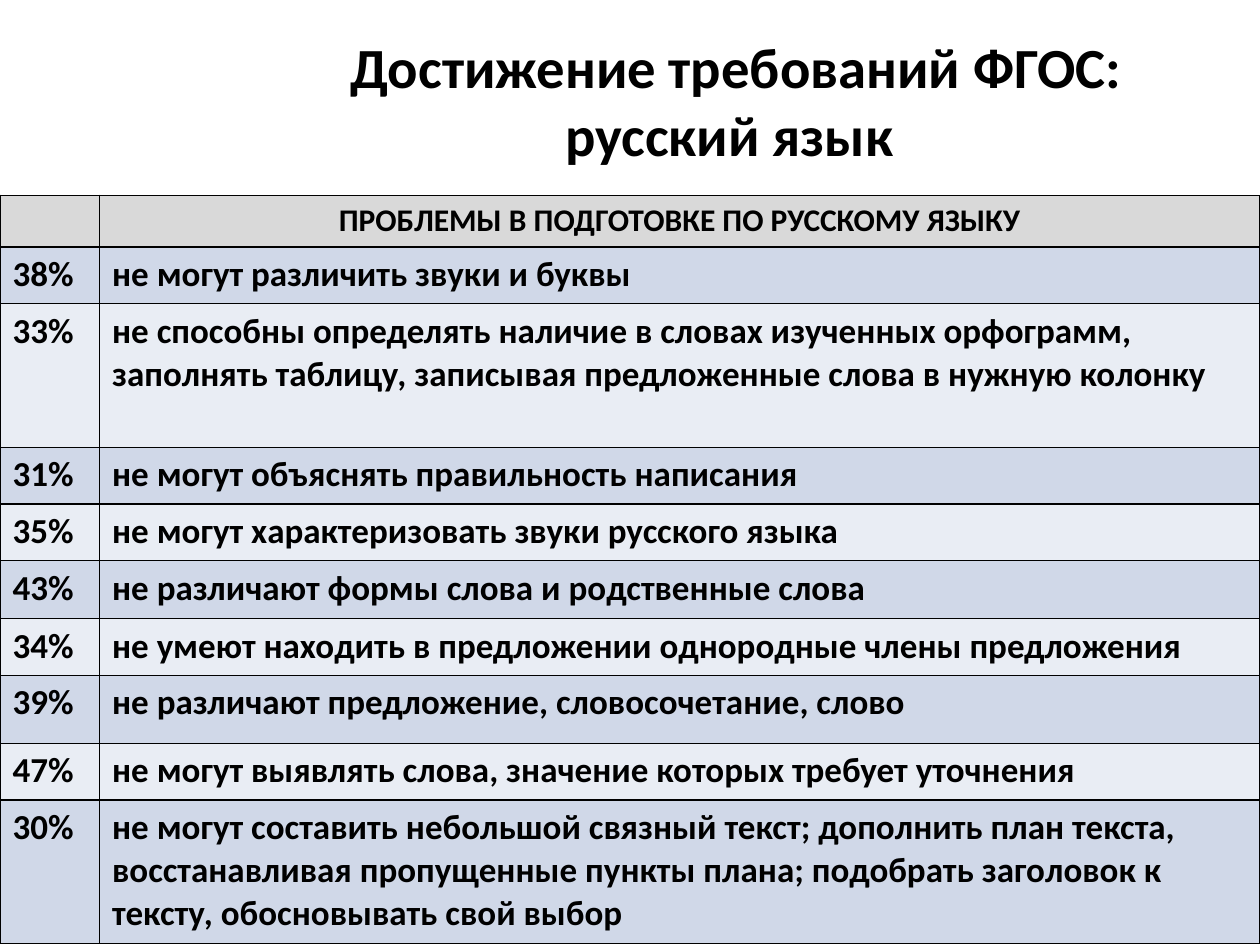
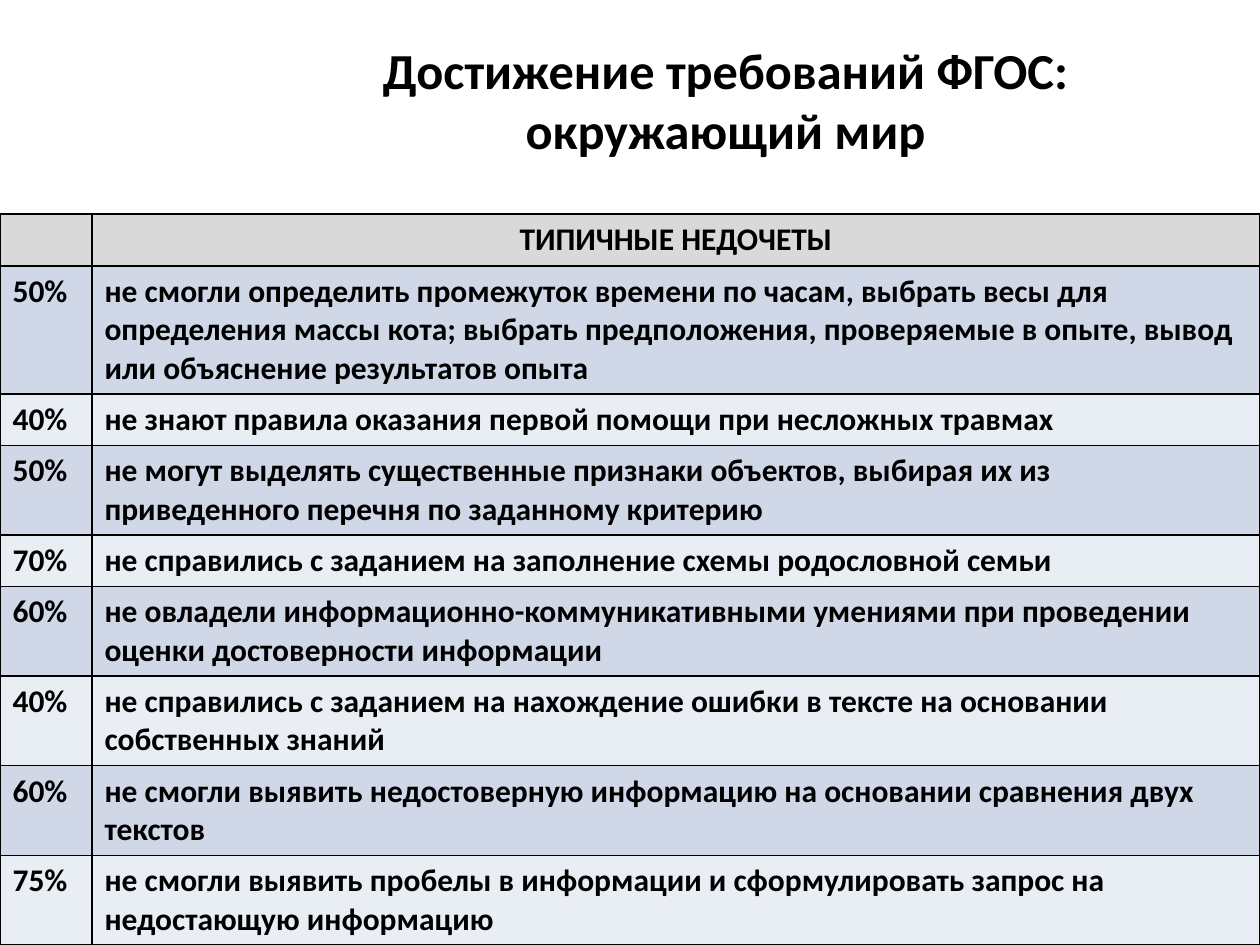
from dataclasses import dataclass

from lxml.etree import SubElement
from pptx import Presentation
from pptx.dml.color import RGBColor
from pptx.enum.text import MSO_ANCHOR, MSO_AUTO_SIZE, PP_ALIGN
from pptx.oxml.ns import qn
from pptx.util import Emu, Pt

EMU_PER_PX = 9144
SLIDE_WIDTH, SLIDE_HEIGHT = 1000, 750
TITLE_TOP, TITLE_HEIGHT, TITLE_RIGHT = 25, 108, 959
TITLE_ONLY_LAYOUT = 5
COLORS = {
    "text": "000000",
    "border": "000000",
    "header": "D9D9D9",
    "odd_row": "D0D8E8",
    "even_row": "E9EDF4",
}
FONT_FORMAT = {"name": "Calibri", "bold": True}
TITLE_FORMAT = {
    "word_wrap": True,
    "auto_size": MSO_AUTO_SIZE.NONE,
    "vertical_anchor": MSO_ANCHOR.MIDDLE,
}
BORDER_WIDTH = Pt(1)
BORDER_SIDES = ("a:lnL", "a:lnR", "a:lnT", "a:lnB")
HEADER_SIZE = 18


@dataclass(frozen=True)
class Finding:
    share: str
    problem: str
    height: int


@dataclass(frozen=True)
class SubjectSlide:
    title: str
    title_left: int
    title_size: float
    table_top: int
    share_width: int
    header: str
    text_size: int
    findings: tuple[Finding, ...]


HEADER_HEIGHT = 41

SUBJECTS = (
    SubjectSlide(
        title="Достижение требований ФГОС: русский язык ",
        title_left=209,
        title_size=32.4,
        table_top=155,
        share_width=79,
        header="ПРОБЛЕМЫ В ПОДГОТОВКЕ ПО РУССКОМУ ЯЗЫКУ",
        text_size=20,
        findings=(
            Finding("38%", "не могут различить звуки и буквы", 45),
            Finding("33%", "не способны определять наличие в словах изученных орфограмм, "
                    "заполнять таблицу, записывая предложенные слова в нужную колонку", 114),
            Finding("31%", "не могут объяснять правильность написания", 45),
            Finding("35%", "не могут характеризовать звуки русского языка", 45),
            Finding("43%", "не различают формы слова и родственные слова", 46),
            Finding("34%", "не умеют находить в предложении однородные члены предложения", 45),
            Finding("39%", "не различают предложение, словосочетание, слово", 54),
            Finding("47%", "не могут выявлять слова, значение которых требует уточнения", 45),
            Finding("30%", "не могут составить небольшой связный текст; дополнить план текста, "
                    "восстанавливая пропущенные пункты плана; подобрать заголовок к тексту, "
                    "обосновывать свой выбор", 114),
        ),
    ),
    SubjectSlide(
        title="Достижение требований ФГОС: окружающий мир",
        title_left=193,
        title_size=28.8,
        table_top=170,
        share_width=73,
        header="ТИПИЧНЫЕ НЕДОЧЕТЫ",
        text_size=18,
        findings=(
            Finding("50%", "не смогли определить промежуток времени по часам, выбрать весы для "
                    "определения массы кота; выбрать предположения, проверяемые в опыте, вывод "
                    "или объяснение результатов опыта", 101),
            Finding("40%", "не знают правила оказания первой помощи при несложных травмах", 41),
            Finding("50%", "не могут выделять существенные признаки объектов, выбирая их из "
                    "приведенного перечня по заданному критерию", 71),
            Finding("70%", "не справились с заданием на заполнение схемы родословной семьи", 41),
            Finding("60%", "не овладели информационно-коммуникативными умениями при проведении "
                    "оценки достоверности информации", 71),
            Finding("40%", "не справились с заданием на нахождение ошибки в тексте на основании "
                    "собственных знаний", 71),
            Finding("60%", "не смогли выявить недостоверную информацию на основании сравнения "
                    "двух текстов", 68),
            Finding("75%", "не смогли выявить пробелы в информации и сформулировать запрос на "
                    "недостающую информацию", 71),
        ),
    ),
)


def px(length: int) -> Emu:
    return Emu(length * EMU_PER_PX)


def set_attributes(target, values: dict) -> None:
    for name, value in values.items():
        setattr(target, name, value)


def write_text(text_frame, text: str, size: float, alignment: PP_ALIGN) -> None:
    paragraph = text_frame.paragraphs[0]
    paragraph.alignment = alignment
    run = paragraph.add_run()
    run.text = text
    set_attributes(run.font, FONT_FORMAT | {"size": Pt(size)})
    run.font.color.rgb = RGBColor.from_string(COLORS["text"])


def style_cell(cell, fill_color: str) -> None:
    properties = cell._tc.get_or_add_tcPr()
    for side in BORDER_SIDES:
        line = SubElement(properties, qn(side), w=str(BORDER_WIDTH))
        fill = SubElement(line, qn("a:solidFill"))
        SubElement(fill, qn("a:srgbClr"), val=COLORS["border"])
    cell.fill.solid()
    cell.fill.fore_color.rgb = RGBColor.from_string(fill_color)


def add_title(slide, subject: SubjectSlide) -> None:
    title = slide.shapes.title
    set_attributes(title, {
        "left": px(subject.title_left),
        "top": px(TITLE_TOP),
        "width": px(TITLE_RIGHT - subject.title_left),
        "height": px(TITLE_HEIGHT),
    })
    set_attributes(title.text_frame, TITLE_FORMAT)
    write_text(title.text_frame, subject.title, subject.title_size, PP_ALIGN.CENTER)


def add_findings_table(slide, subject: SubjectSlide) -> None:
    heights = [HEADER_HEIGHT] + [finding.height for finding in subject.findings]
    widths = (subject.share_width, SLIDE_WIDTH - subject.share_width)
    table = slide.shapes.add_table(
        len(heights), len(widths), px(0), px(subject.table_top),
        px(SLIDE_WIDTH), px(sum(heights)),
    ).table
    for column, width in zip(table.columns, widths):
        column.width = px(width)
    for row, height in zip(table.rows, heights):
        row.height = px(height)

    for cell in table.rows[0].cells:
        style_cell(cell, COLORS["header"])
    write_text(table.cell(0, 1).text_frame, subject.header, HEADER_SIZE, PP_ALIGN.CENTER)

    for number, finding in enumerate(subject.findings, start=1):
        fill_color = COLORS["odd_row" if number % 2 else "even_row"]
        for cell, text in zip(table.rows[number].cells, (finding.share, finding.problem)):
            style_cell(cell, fill_color)
            write_text(cell.text_frame, text, subject.text_size, PP_ALIGN.LEFT)


def main() -> None:
    presentation = Presentation()
    presentation.slide_width = px(SLIDE_WIDTH)
    presentation.slide_height = px(SLIDE_HEIGHT)
    for subject in SUBJECTS:
        slide = presentation.slides.add_slide(presentation.slide_layouts[TITLE_ONLY_LAYOUT])
        add_title(slide, subject)
        add_findings_table(slide, subject)
    presentation.save("out.pptx")


if __name__ == "__main__":
    main()
